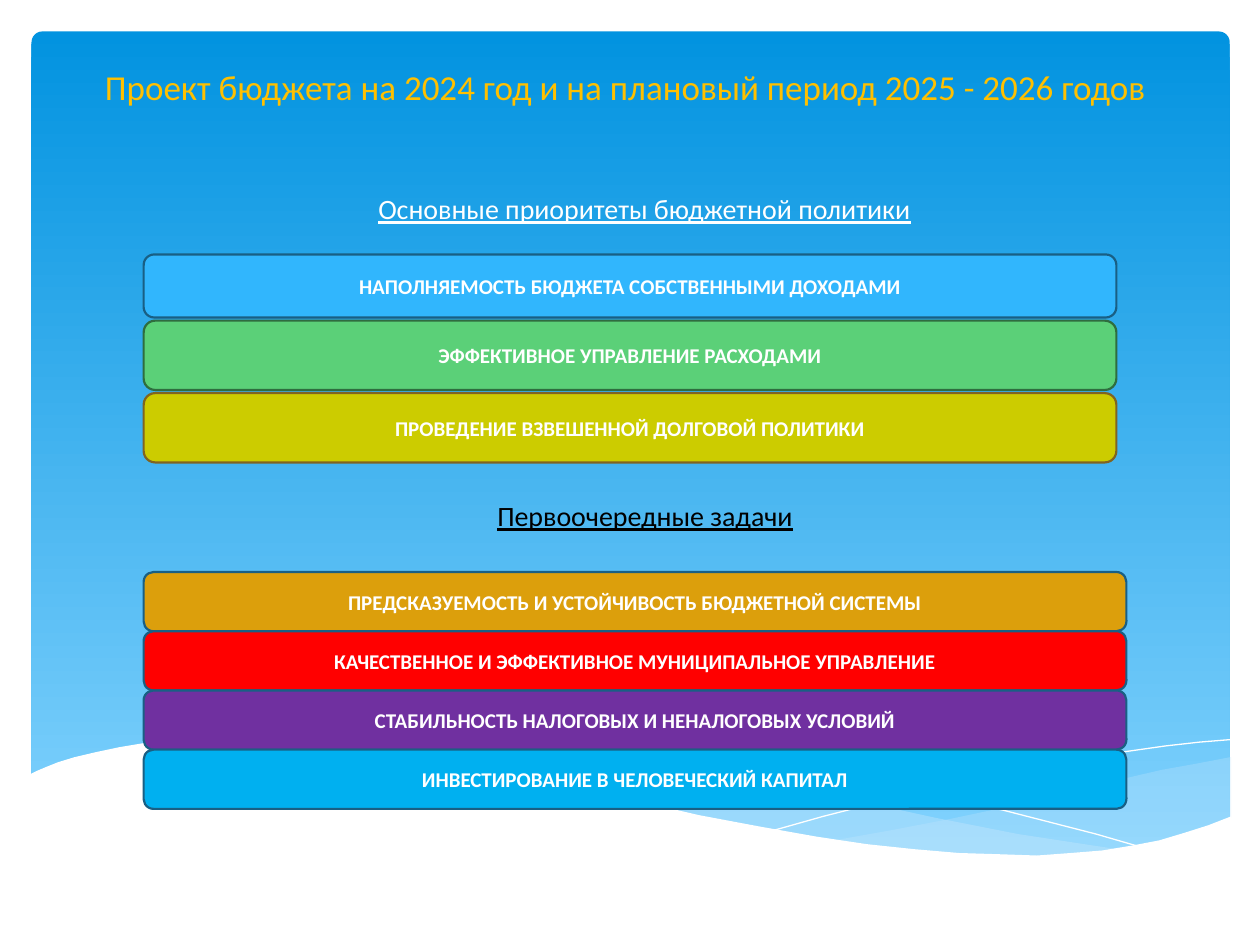
"""Build the slide on budget priorities and first tasks for 2024-2026."""
import dataclasses

import lxml.etree
import pptx
import pptx.dml.color
import pptx.enum.shapes
import pptx.enum.text
import pptx.oxml.ns
import pptx.util


@dataclasses.dataclass(frozen=True)
class Theme:
    """Colours, type sizes and line widths of the slide."""
    font: str = "Calibri"
    title_size: int = 20
    heading_size: int = 16
    bar_size: int = 12
    outline: float = 1.25
    title: str = "FFC000"
    white: str = "FFFFFF"
    black: str = "000000"
    sky_top: str = "0293E0"
    sky_bottom: str = "83D3FE"
    mist: str = "C6E7FC"
    blue_edge: str = "195F84"


THEME = Theme()
CELL = pptx.util.Inches(0.1)
POINT = CELL // 10

PRIORITIES = [
    ("НАПОЛНЯЕМОСТЬ БЮДЖЕТА СОБСТВЕННЫМИ ДОХОДАМИ", "31B6FD", THEME.blue_edge, 5),
    ("ЭФФЕКТИВНОЕ УПРАВЛЕНИЕ РАСХОДАМИ", "5BD078", "2F6D3F", 5.5),
    ("ПРОВЕДЕНИЕ ВЗВЕШЕННОЙ ДОЛГОВОЙ ПОЛИТИКИ", "CCCC00", "806421", 5.5),
]
TASKS = [
    ("ПРЕДСКАЗУЕМОСТЬ И УСТОЙЧИВОСТЬ БЮДЖЕТНОЙ СИСТЕМЫ", "DC9F0C", THEME.blue_edge, 4.7),
    ("КАЧЕСТВЕННОЕ И ЭФФЕКТИВНОЕ МУНИЦИПАЛЬНОЕ УПРАВЛЕНИЕ", "FF0000", THEME.blue_edge, 4.7),
    ("СТАБИЛЬНОСТЬ НАЛОГОВЫХ И НЕНАЛОГОВЫХ УСЛОВИЙ", "7030A0", THEME.blue_edge, 4.7),
    ("ИНВЕСТИРОВАНИЕ В ЧЕЛОВЕЧЕСКИЙ КАПИТАЛ", "00B0F0", THEME.blue_edge, 4.7),
]

RIGHT_MIST = [
    (976, 601), (950, 606), (922, 611), (892, 618), (862, 625), (806, 639),
    (754, 650), (707, 659), (662, 667), (692, 671), (719, 674), (746, 677),
    (770, 679), (804, 680), (836, 679), (864, 677), (890, 674), (914, 669),
    (937, 663), (951, 659), (964, 654), (977, 649), (977, 601),
]
WIDE_MIST = [
    (894, 675), (867, 671), (808, 662), (742, 649), (669, 633), (630, 624),
    (584, 613), (542, 604), (502, 598), (465, 593), (420, 589), (380, 587),
    (345, 588), (314, 590), (287, 593), (323, 598), (363, 604), (405, 613),
    (450, 624), (491, 634), (530, 642), (567, 650), (602, 657), (635, 663),
    (666, 668), (696, 672), (723, 676), (749, 678), (786, 680), (839, 680),
    (868, 678),
]
FALLING_LINE = [
    (310, 597), (329, 594), (353, 591), (388, 589), (433, 589), (469, 590),
    (511, 594), (557, 598), (609, 606), (666, 615), (728, 628), (796, 643),
    (870, 662), (908, 673),
]
RISING_LINE = [
    (614, 659), (653, 648), (696, 637), (749, 625), (807, 612), (867, 600),
    (897, 596), (925, 592), (952, 589), (976, 587),
]
WHITE_WAVE = [
    (977, 648), (959, 655), (940, 661), (920, 667), (899, 671), (875, 675),
    (850, 677), (823, 679), (793, 678), (761, 677), (726, 674), (688, 670),
    (648, 664), (603, 656), (555, 647), (503, 635), (447, 622), (391, 609),
    (340, 599), (292, 592), (250, 588), (211, 586), (177, 586), (146, 587),
    (119, 589), (95, 593), (76, 597), (59, 601), (46, 605), (36, 609),
    (29, 612), (23, 615), (23, 731), (977, 731),
]


def cells(count):
    """Turn a count of grid cells into a length."""
    return pptx.util.Emu(round(count * CELL))


def rgb(value):
    """Turn a hex string into a colour."""
    return pptx.dml.color.RGBColor.from_string(value)


def write(frame, text, size, color, anchor, bold=False, underline=False, before=0):
    """Write one centred run into a text frame."""
    frame.word_wrap = True
    frame.auto_size = pptx.enum.text.MSO_AUTO_SIZE.NONE
    frame.vertical_anchor = anchor
    paragraph = frame.paragraphs[0]
    paragraph.alignment = pptx.enum.text.PP_ALIGN.CENTER
    paragraph.space_before = pptx.util.Pt(before)
    run = paragraph.add_run()
    run.text = text
    run.font.name = THEME.font
    run.font.size = pptx.util.Pt(size)
    run.font.bold = bold
    run.font.underline = underline
    run.font.color.rgb = rgb(color)


def add_rounded(slide, left, top, width, height):
    """Add a rounded panel placed on the grid."""
    panel = slide.shapes.add_shape(
        pptx.enum.shapes.MSO_SHAPE.ROUNDED_RECTANGLE,
        *map(cells, (left, top, width, height)))
    panel.shadow.inherit = False
    return panel


def add_sky(slide):
    """Add the blue gradient panel."""
    sky = add_rounded(slide, 2.5, 2.5, 95.1, 66)
    sky.adjustments[0] = 0.013
    sky.line.fill.background()
    sky.fill.gradient()
    sky.fill.gradient_angle = 270
    shades = (THEME.sky_top, THEME.sky_bottom)
    for position, (stop, shade) in enumerate(zip(sky.fill.gradient_stops, shades)):
        stop.position = position
        stop.color.rgb = rgb(shade)


def trace(slide, points, closed):
    """Draw an outline through points given in tenths of a cell."""
    builder = slide.shapes.build_freeform(*points[0], scale=POINT)
    builder.add_line_segments(points[1:], close=closed)
    outline = builder.convert_to_shape()
    outline.shadow.inherit = False
    return outline


def add_wave(slide, points, color, opacity=100):
    """Add a filled wave, see-through below full opacity."""
    wave = trace(slide, points, True)
    wave.line.fill.background()
    wave.fill.solid()
    wave.fill.fore_color.rgb = rgb(color)
    if opacity < 100:
        qn = pptx.oxml.ns.qn
        shade = wave.element.spPr.find(qn("a:solidFill")).find(qn("a:srgbClr"))
        lxml.etree.SubElement(shade, qn("a:alpha"), val=str(opacity * 1000))


def add_hairline(slide, points):
    """Add a thin white curve."""
    curve = trace(slide, points, False)
    curve.fill.background()
    curve.line.color.rgb = rgb(THEME.white)
    curve.line.width = pptx.util.Pt(0)


def add_title(slide, text):
    """Place the title in front of the backdrop and write it."""
    title = slide.shapes.title
    slide.shapes.element.append(title.element)
    title.left, title.top, title.width, title.height = map(cells, (6.7, 5.2, 85.9, 3.8))
    write(title.text_frame, text, THEME.title_size, THEME.title,
          pptx.enum.text.MSO_ANCHOR.BOTTOM)


def add_heading(slide, text, left, top, width, height, color, before=0):
    """Add an underlined section heading."""
    heading = slide.shapes.add_textbox(*map(cells, (left, top, width, height)))
    write(heading.text_frame, text, THEME.heading_size, color,
          pptx.enum.text.MSO_ANCHOR.TOP, underline=True, before=before)


def add_bars(slide, bars, left, top, width, gap):
    """Stack labelled bars downwards with an equal gap."""
    for text, color, edge, height in bars:
        bar = add_rounded(slide, left, top, width, height)
        bar.fill.solid()
        bar.fill.fore_color.rgb = rgb(color)
        bar.line.color.rgb = rgb(edge)
        bar.line.width = pptx.util.Pt(THEME.outline)
        write(bar.text_frame, text, THEME.bar_size, THEME.white,
              pptx.enum.text.MSO_ANCHOR.MIDDLE, bold=True)
        top += height + gap


def main():
    """Build and save the slide."""
    deck = pptx.Presentation()
    deck.slide_width, deck.slide_height = cells(100), cells(75)
    slide = deck.slides.add_slide(deck.slide_layouts.get_by_name("Title Only"))
    add_sky(slide)
    add_wave(slide, RIGHT_MIST, THEME.mist, 29)
    add_wave(slide, WIDE_MIST, THEME.mist, 40)
    add_hairline(slide, FALLING_LINE)
    add_hairline(slide, RISING_LINE)
    add_wave(slide, WHITE_WAVE, THEME.white)
    add_title(slide, "Проект бюджета на 2024 год и на плановый период 2025 - 2026 годов")
    add_heading(slide, "Основные приоритеты бюджетной политики",
                8.2, 14.7, 85.9, 3.8, THEME.white, before=3.2)
    add_bars(slide, PRIORITIES, 11.4, 20.2, 77.2, 0.25)
    add_heading(slide, "Первоочередные задачи", 20.1, 39.1, 62.2, 3.7, THEME.black)
    add_bars(slide, TASKS, 11.4, 45.4, 78, 0)
    deck.save("out.pptx")


if __name__ == "__main__":
    main()
